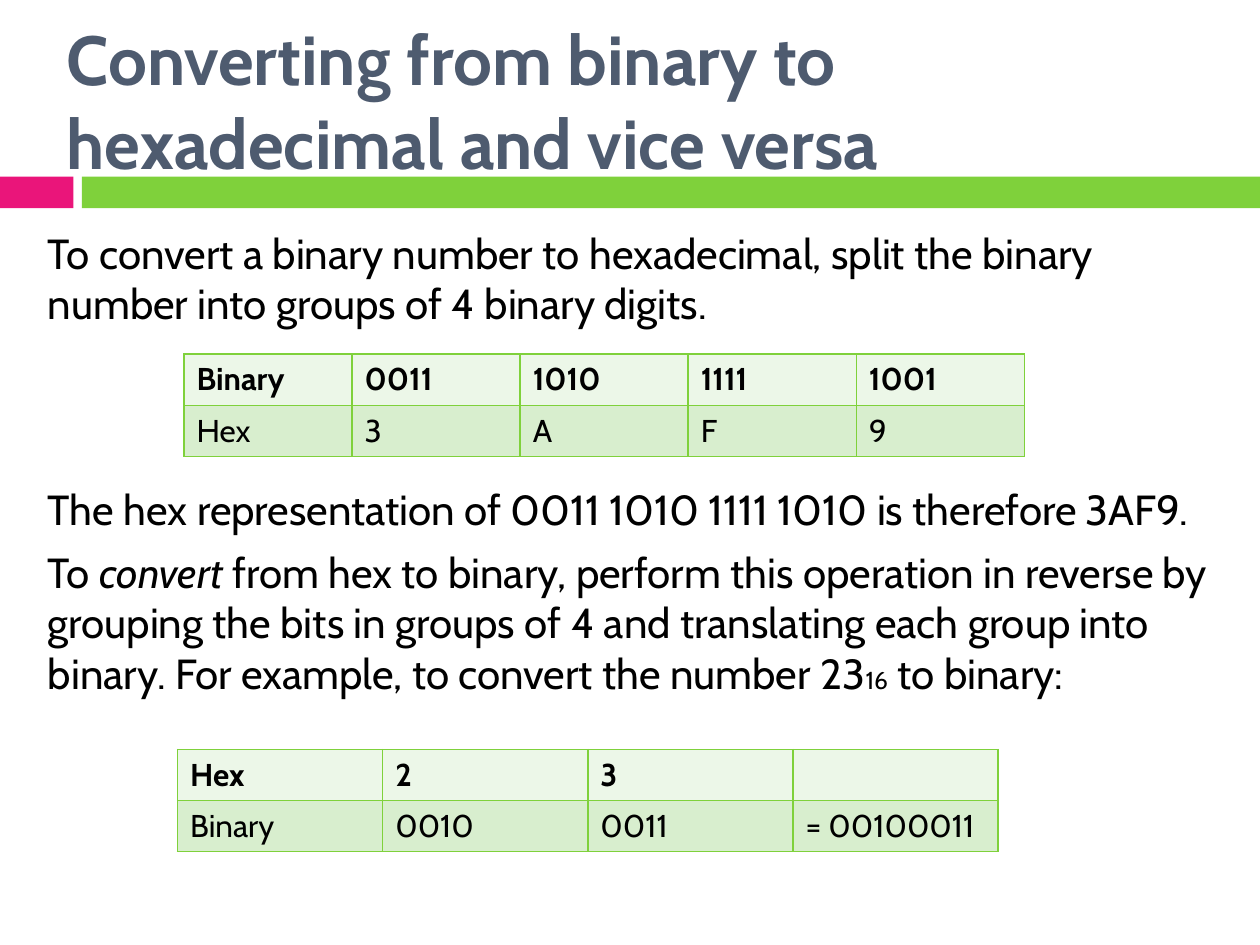
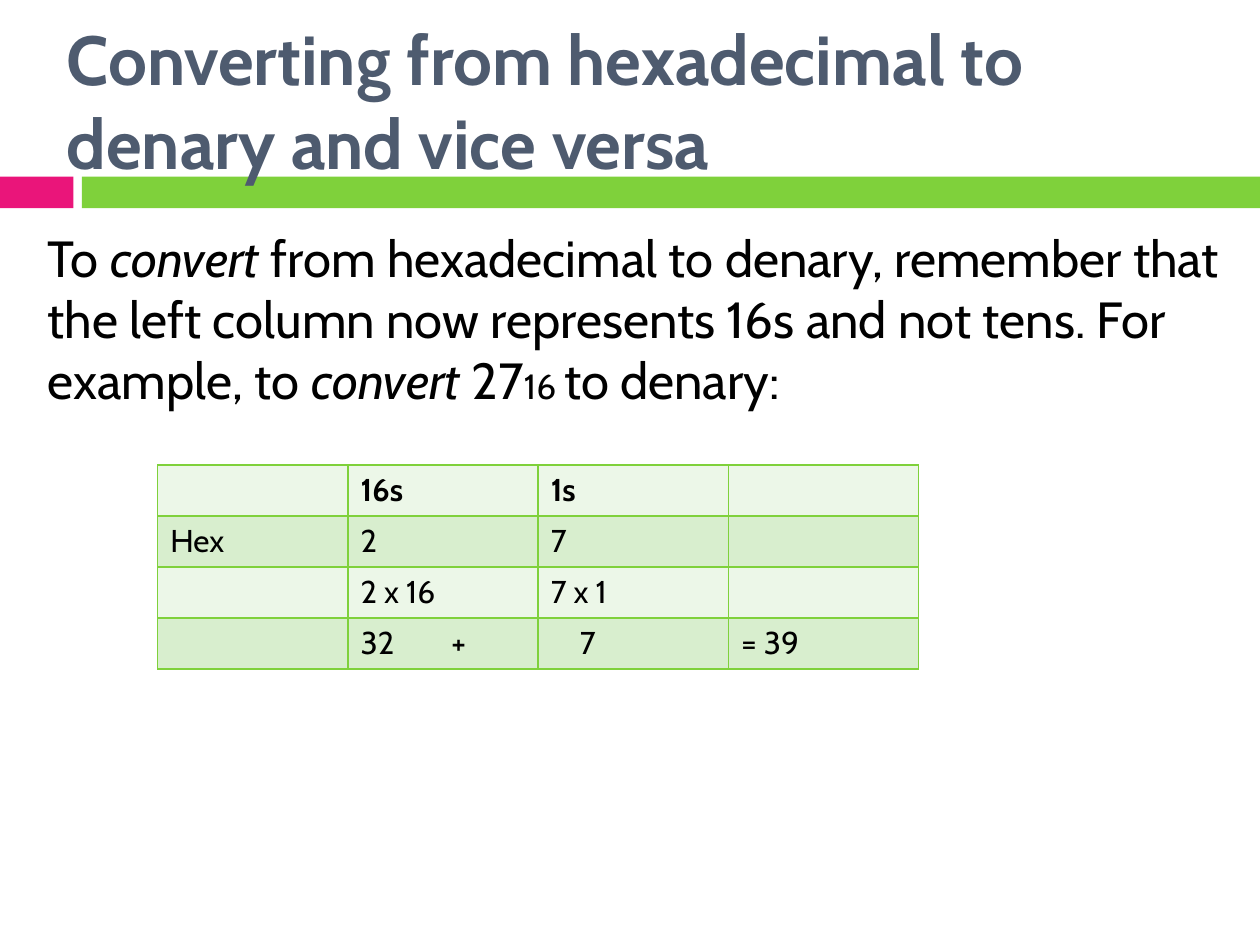
from pptx import Presentation
from pptx.dml.color import RGBColor
from pptx.enum.shapes import MSO_SHAPE as SHAPE
from pptx.enum.text import MSO_ANCHOR as ANCHOR, MSO_AUTO_SIZE as AUTOSIZE, PP_ALIGN as ALIGN
from pptx.oxml.ns import qn
from pptx.util import Cm, Pt
from lxml.etree import SubElement


def rgb(hex_color):
    return RGBColor.from_string(hex_color)


def write(p, text, size=18, color="000000", bold=False, italic=False):
    r = p.add_run()
    r.text = text
    font = r.font
    font.name = "Cabin"
    font.size = Pt(size)
    font.bold = bold
    font.italic = italic
    font.color.rgb = rgb(color)


class Deck:
    PINK = "EA157A"
    GREEN = "7FD13B"
    TITLE = "4E5B6F"
    ROWS = ("ECF7E8", "D8EECE")
    ROW_HEIGHT = 1.03

    def __init__(self):
        self.prs = Presentation()
        self.prs.slide_width = Cm(25.4)
        self.prs.slide_height = Cm(19.05)
        self.s = None

    def new_slide(self, title):
        self.s = self.prs.slides.add_slide(self.prs.slide_layouts[1])
        tf = self.place(self.s.shapes.title, 1.09, 0.64, 23.8, 2.74)
        tf.vertical_anchor = ANCHOR.MIDDLE
        tf.paragraphs[0].alignment = ALIGN.LEFT
        write(tf.paragraphs[0], title, size=39.6, color=self.TITLE, bold=True)

    def place(self, sp, left, top, width, height):
        sp.left, sp.top, sp.width, sp.height = map(Cm, (left, top, width, height))
        tf = sp.text_frame
        tf.word_wrap = True
        tf.auto_size = AUTOSIZE.NONE
        return tf

    def master_band(self, left, width, color):
        sp = self.s.shapes.add_shape(SHAPE.RECTANGLE, Cm(left), Cm(3.56), Cm(width), Cm(0.64))
        sp.shadow.inherit = False
        sp.fill.solid()
        sp.fill.fore_color.rgb = rgb(color)
        sp.line.fill.background()
        self.prs.slide_master.shapes.element.insert(2, sp.element)

    def body(self, height, size, paragraphs):
        tf = self.place(self.s.placeholders[1], 0.71, 4.45, 24.21, height)
        for i, (space, runs) in enumerate(paragraphs):
            p = tf.add_paragraph() if i else tf.paragraphs[0]
            p.space_before = Pt(space)
            pPr = p._p.get_or_add_pPr()
            pPr.set("marL", "0")
            pPr.set("indent", "0")
            SubElement(pPr, qn("a:buNone"))
            for text, style in runs:
                write(p, text, **{"size": size, **style})

    def table(self, left, top, width, rows):
        frame = self.s.shapes.add_table(len(rows), len(rows[0]), Cm(left), Cm(top),
                                        Cm(width), Cm(self.ROW_HEIGHT * len(rows)))
        table = frame.table
        table.first_row = table.horz_banding = False
        for i, row in enumerate(rows):
            for j, text in enumerate(row):
                cell = table.cell(i, j)
                self.border(cell)
                cell.fill.solid()
                cell.fill.fore_color.rgb = rgb(self.ROWS[i % 2])
                if text:
                    write(cell.text_frame.paragraphs[0], text, bold=i == 0)
        return table

    def border(self, cell):
        tcPr = cell._tc.get_or_add_tcPr()
        for side in ("a:lnL", "a:lnR", "a:lnT", "a:lnB"):
            ln = SubElement(tcPr, qn(side), w=str(Pt(1)))
            fill = SubElement(ln, qn("a:solidFill"))
            SubElement(fill, qn("a:srgbClr"), val=self.GREEN)

    def tab_stop(self, cell, position):
        pPr = cell.text_frame.paragraphs[0]._p.get_or_add_pPr()
        tabs = SubElement(pPr, qn("a:tabLst"))
        SubElement(tabs, qn("a:tab"), pos=str(Cm(position)), algn="l")


def main():
    plain, italic = {}, {"italic": True}
    deck = Deck()

    deck.new_slide("Converting from binary to hexadecimal and vice versa")
    deck.master_band(0, 1.48, deck.PINK)
    deck.master_band(1.65, 23.75, deck.GREEN)
    deck.body(3.28, 24, [
        (7, [("To convert a binary number to hexadecimal, split the binary number "
              "into groups of 4 binary digits.", plain)]),
        (89, [("The hex representation of 0011 1010 1111 1010 is therefore 3AF9.", plain)]),
        (7, [("To ", plain), ("convert ", italic),
             ("from hex to binary, perform this operation in reverse by grouping the bits "
              "in groups of 4 and translating each group into binary. For example, "
              "to convert the number 23", plain),
             ("16", {"size": 14}), (" to binary:", plain)]),
    ])
    deck.table(3.71, 7.14, 16.94, [
        ["Binary", "0011", "1010", "1111", "1001"],
        ["Hex", "3", "A", "F", "9"],
    ])
    deck.table(3.58, 15.11, 16.54, [
        ["Hex", "2", "3", ""],
        ["Binary", "0010", "0011", "= 00100011"],
    ])

    deck.new_slide("Converting from hexadecimal to denary and vice versa")
    deck.body(3.89, 29, [
        (7, [("To ", plain), ("convert ", italic),
             ("from hexadecimal to denary, remember that the left column now represents "
              "16s and not tens. For example, to ", plain),
             ("convert ", italic), ("27", plain), ("16 ", {"size": 20}),
             ("to denary:", plain)]),
    ])
    sums = deck.table(3.18, 9.37, 15.34, [
        ["", "16s", "1s", ""],
        ["Hex", "2", "7", ""],
        ["", "2 x 16", "7 x 1", ""],
        ["", "32\t+", "7", "= 39"],
    ])
    deck.tab_stop(sums.cell(3, 1), 1.83)
    sums.cell(3, 2).margin_left = Cm(0.84)

    deck.prs.save("out.pptx")


if __name__ == "__main__":
    main()
